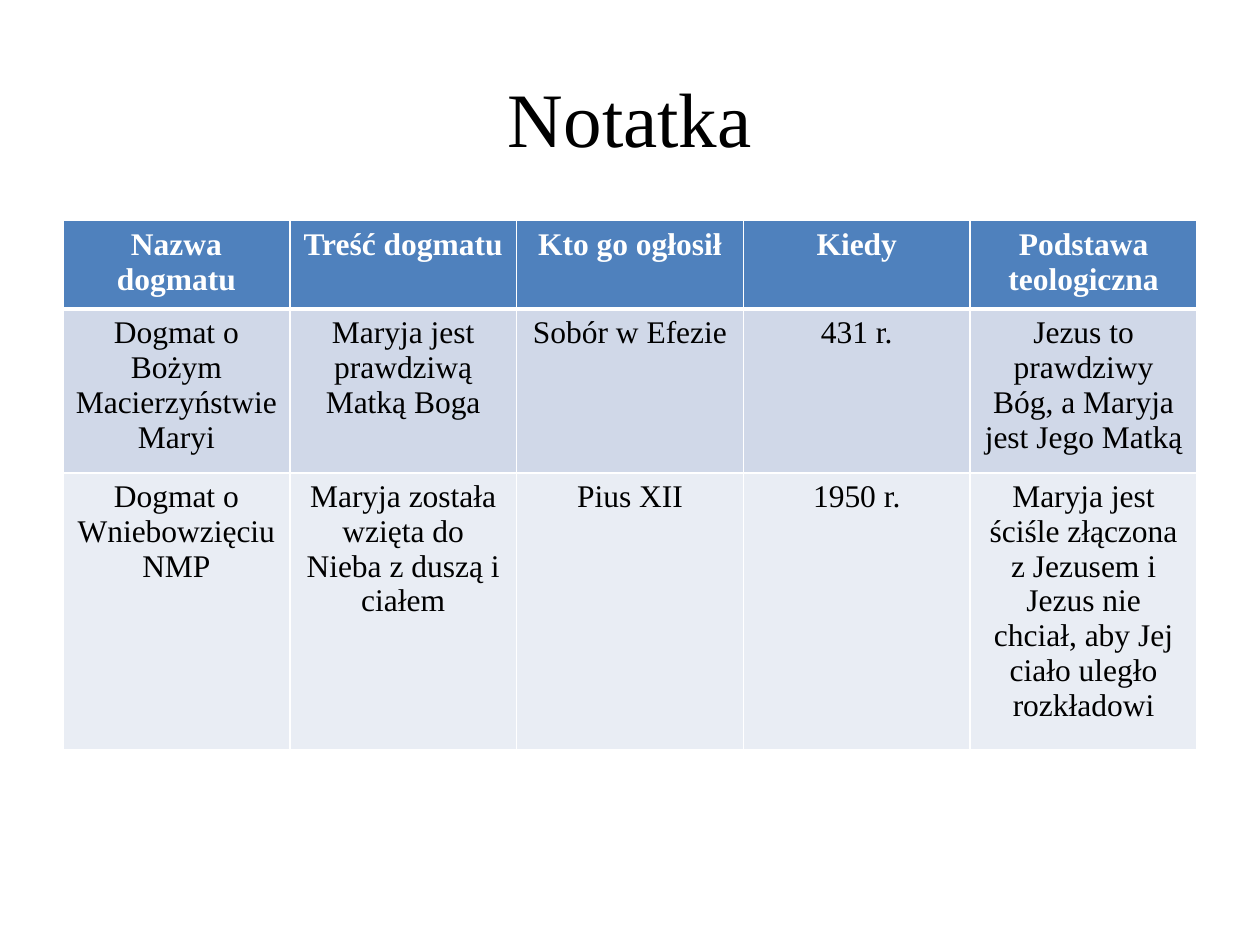
from lxml.etree import SubElement as Sub
from pptx import Presentation
from pptx.dml.color import RGBColor
from pptx.enum.text import MSO_ANCHOR as Anchor, PP_ALIGN as Align
from pptx.oxml.ns import qn
from pptx.util import Cm, Pt

FACE = "Times New Roman"
HEAD = {"name": FACE, "size": Pt(18), "bold": True}
BODY = {"name": FACE, "size": Pt(18), "bold": False}
ROWS = [
    ["Nazwa dogmatu", "Treść dogmatu", "Kto go ogłosił", "Kiedy",
     "Podstawa teologiczna"],
    ["Dogmat o Bożym Macierzyństwie Maryi",
     "Maryja jest prawdziwą Matką Boga", "Sobór w Efezie", "431 r.",
     "Jezus to prawdziwy Bóg, a Maryja jest Jego Matką"],
    ["Dogmat o Wniebowzięciu NMP",
     "Maryja została wzięta do Nieba z duszą i ciałem", "Pius XII", "1950 r.",
     "Maryja jest ściśle złączona z Jezusem i Jezus nie chciał, "
     "aby Jej ciało uległo rozkładowi"],
]
# Height in cm, fill, text colour, font, top and bottom border in points
LOOKS = [
    (1.65, "4F81BD", "FFFFFF", HEAD, 1, 3),
    (3.05, "D0D8E8", "000000", BODY, 3, 1),
    (5.15, "E9EDF4", "000000", BODY, 1, 1),
]


def tint(code):
    return RGBColor.from_string(code)


def write(frame, text, color, form):
    para = frame.paragraphs[0]
    para.alignment = Align.CENTER
    run = para.add_run()
    run.text = text
    for key, val in form.items():
        setattr(run.font, key, val)
    run.font.color.rgb = tint(color)


def edge(cell, top, base):
    """Draw white borders; call before the cell gets its fill."""
    props = cell._tc.get_or_add_tcPr()
    for side, width in zip("LRTB", (1, 1, top, base)):
        line = Sub(props, qn(f"a:ln{side}"), w=str(Pt(width)))
        Sub(Sub(line, qn("a:solidFill")), qn("a:srgbClr"), val="FFFFFF")


def add_title(slide, box, text):
    frame = slide.shapes.add_textbox(*box).text_frame
    frame.word_wrap = True
    frame.vertical_anchor = Anchor.MIDDLE
    write(frame, text, "000000", {"name": FACE, "size": Pt(44)})


def add_grid(slide, box, rows):
    grid = slide.shapes.add_table(len(rows), len(rows[0]), *box).table
    for row, texts, look in zip(grid.rows, rows, LOOKS):
        high, fill, color, form, top, base = look
        row.height = Cm(high)
        for cell, text in zip(row.cells, texts):
            edge(cell, top, base)
            cell.fill.solid()
            cell.fill.fore_color.rgb = tint(fill)
            write(cell.text_frame, text, color, form)


def main():
    deck = Presentation()
    deck.slide_width, deck.slide_height = Cm(25.4), Cm(19.05)
    slide = deck.slides.add_slide(deck.slide_layouts[6])
    left, wide = Cm(1.27), Cm(22.86)
    add_title(slide, (left, Cm(0.76), wide, Cm(3.18)), "Notatka")
    tall = Cm(sum(look[0] for look in LOOKS))
    add_grid(slide, (left, Cm(4.45), wide, tall), ROWS)
    deck.save("out.pptx")


if __name__ == "__main__":
    main()
